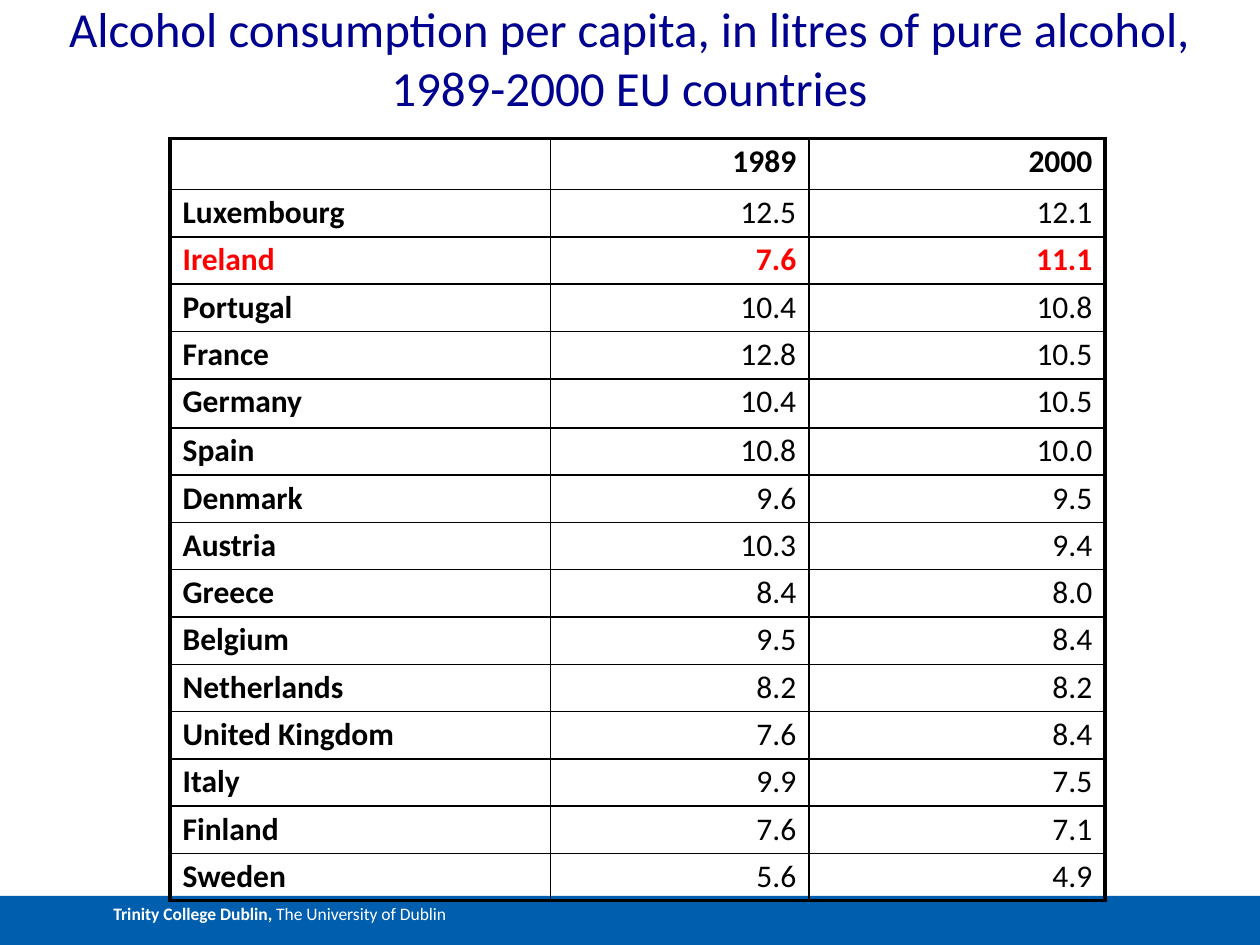
from dataclasses import dataclass

from lxml import etree
from pptx import Presentation
from pptx.dml.color import RGBColor
from pptx.enum.shapes import MSO_SHAPE
from pptx.enum.text import MSO_ANCHOR, MSO_AUTO_SIZE, PP_ALIGN
from pptx.oxml.ns import qn
from pptx.util import Inches, Pt

RECTANGLE = MSO_SHAPE.RECTANGLE
TOP, BOTTOM = MSO_ANCHOR.TOP, MSO_ANCHOR.BOTTOM
NO_AUTOFIT = MSO_AUTO_SIZE.NONE
LEFT, CENTER, RIGHT = PP_ALIGN.LEFT, PP_ALIGN.CENTER, PP_ALIGN.RIGHT

FONT = "Calibri"
COLORS = {
    "title": "000090",
    "bar": "005EAE",
    "bar_text": "FFFFFF",
    "text": "000000",
    "highlight": "FF0000",
    "border": "000000",
}
THIN, THICK = 1, 2.25
COLUMN_WIDTHS = (3.02, 2.05, 2.35)
HEADER_HEIGHT, ROW_HEIGHT, GERMANY_HEIGHT = 0.4, 0.37, 0.39


@dataclass(frozen=True)
class Consumption:
    country: str
    year_1989: str
    year_2000: str

    def cells(self) -> tuple[str, str, str]:
        return self.country, self.year_1989, self.year_2000


ROWS = (
    Consumption("", "1989", "2000"),
    Consumption("Luxembourg", "12.5", "12.1"),
    Consumption("Ireland", "7.6", "11.1"),
    Consumption("Portugal", "10.4", "10.8"),
    Consumption("France", "12.8", "10.5"),
    Consumption("Germany", "10.4", "10.5"),
    Consumption("Spain", "10.8", "10.0"),
    Consumption("Denmark", "9.6", "9.5"),
    Consumption("Austria", "10.3", "9.4"),
    Consumption("Greece", "8.4", "8.0"),
    Consumption("Belgium", "9.5", "8.4"),
    Consumption("Netherlands", "8.2", "8.2"),
    Consumption("United Kingdom", "7.6", "8.4"),
    Consumption("Italy", "9.9", "7.5"),
    Consumption("Finland", "7.6", "7.1"),
    Consumption("Sweden", "5.6", "4.9"),
)


def add_run(paragraph, text: str, size: float, color: str, bold: bool = False) -> None:
    run = paragraph.add_run()
    run.text = text
    run.font.name = FONT
    run.font.size = Pt(size)
    run.font.bold = bold
    run.font.color.rgb = RGBColor.from_string(COLORS[color])


def set_margins(text_frame, left: float, top: float, right: float, bottom: float) -> None:
    text_frame.margin_left, text_frame.margin_top = Inches(left), Inches(top)
    text_frame.margin_right, text_frame.margin_bottom = Inches(right), Inches(bottom)


def set_borders(cell, left: float, right: float, top: float, bottom: float) -> None:
    properties = cell._tc.get_or_add_tcPr()
    for side, width in zip("LRTB", (left, right, top, bottom)):
        line = etree.SubElement(properties, qn(f"a:ln{side}"), w=str(Pt(width)))
        fill = etree.SubElement(line, qn("a:solidFill"))
        etree.SubElement(fill, qn("a:srgbClr"), val=COLORS["border"])


def add_footer_bar(slide) -> None:
    bar = slide.shapes.add_shape(
        RECTANGLE, Inches(0), Inches(7.11), Inches(10), Inches(0.39))
    bar.shadow.inherit = False
    bar.fill.solid()
    bar.fill.fore_color.rgb = RGBColor.from_string(COLORS["bar"])
    bar.line.fill.background()
    text_frame = bar.text_frame
    text_frame.vertical_anchor = TOP
    set_margins(text_frame, 0.9, 0.06, 0.1, 0.05)
    paragraph = text_frame.paragraphs[0]
    paragraph.alignment = LEFT
    add_run(paragraph, "Trinity College Dublin, ", 10, "bar_text", bold=True)
    add_run(paragraph, "The University of Dublin", 10, "bar_text")


def fill_title(slide) -> None:
    title = slide.shapes.title
    title.left, title.top = Inches(0.33), Inches(0.25)
    title.width, title.height = Inches(9.33), Inches(0.67)
    text_frame = title.text_frame
    text_frame.word_wrap = True
    text_frame.auto_size = NO_AUTOFIT
    text_frame.vertical_anchor = BOTTOM
    set_margins(text_frame, 0, 0, 0, 0)
    paragraph = text_frame.paragraphs[0]
    paragraph.alignment = CENTER
    add_run(
        paragraph,
        "Alcohol consumption per capita, in litres of pure alcohol, 1989-2000 EU countries",
        28, "title")


def row_height(row: Consumption) -> float:
    if row is ROWS[0]:
        return HEADER_HEIGHT
    return GERMANY_HEIGHT if row.country == "Germany" else ROW_HEIGHT


def add_consumption_table(slide) -> None:
    heights = [row_height(row) for row in ROWS]
    table = slide.shapes.add_table(
        len(ROWS), len(COLUMN_WIDTHS), Inches(1.35), Inches(1.1),
        Inches(sum(COLUMN_WIDTHS)), Inches(sum(heights))).table
    table.first_row = False
    table.horz_banding = False
    for column, width in zip(table.columns, COLUMN_WIDTHS):
        column.width = Inches(width)

    last_row, last_column = len(ROWS) - 1, len(COLUMN_WIDTHS) - 1
    for row_index, row in enumerate(ROWS):
        table.rows[row_index].height = Inches(heights[row_index])
        highlighted = row.country == "Ireland"
        for column_index, text in enumerate(row.cells()):
            cell = table.cell(row_index, column_index)
            # Thick outer frame, thin inner lines
            set_borders(
                cell,
                left=THICK if column_index == 0 else THIN,
                right=THICK if column_index == last_column else THIN,
                top=THICK if row_index == 0 else THIN,
                bottom=THICK if row_index == last_row else THIN)
            cell.fill.background()
            paragraph = cell.text_frame.paragraphs[0]
            paragraph.alignment = LEFT if column_index == 0 else RIGHT
            paragraph.line_spacing = 0.9
            if text:
                add_run(
                    paragraph, text, 18, "highlight" if highlighted else "text",
                    bold=highlighted or row_index == 0 or column_index == 0)


def main() -> None:
    presentation = Presentation()
    presentation.slide_width, presentation.slide_height = Inches(10), Inches(7.5)
    title_only = presentation.slide_layouts[5]
    slide = presentation.slides.add_slide(title_only)
    add_footer_bar(slide)
    fill_title(slide)
    add_consumption_table(slide)
    presentation.save("out.pptx")


if __name__ == "__main__":
    main()
